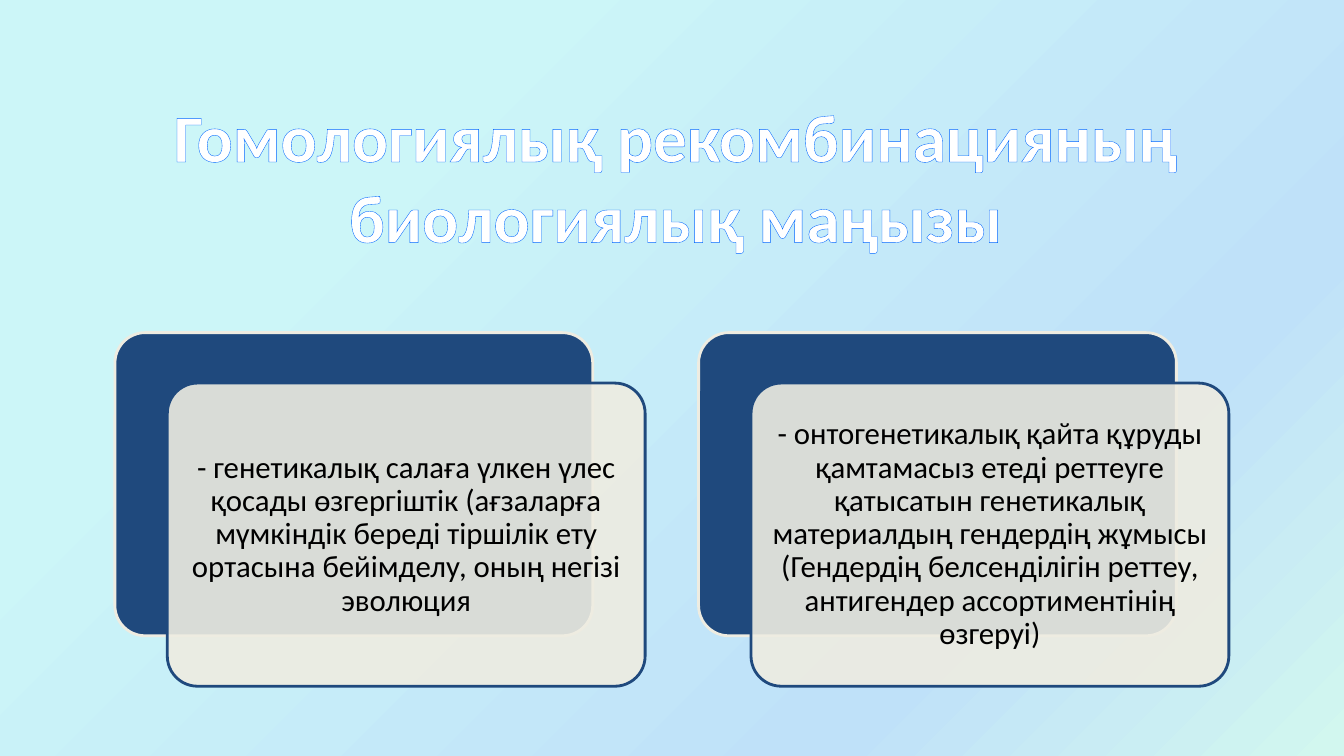
from dataclasses import dataclass

from lxml.etree import SubElement
from pptx import Presentation
from pptx.dml.color import RGBColor
from pptx.enum.shapes import MSO_SHAPE as Preset
from pptx.enum.text import MSO_ANCHOR as Anchor, MSO_AUTO_SIZE as AutoSize, PP_ALIGN as Align
from pptx.oxml.ns import qn
from pptx.shapes.autoshape import Shape
from pptx.slide import Slide
from pptx.text.text import TextFrame
from pptx.util import Emu, Inches, Pt

SLIDE_WIDTH, SLIDE_HEIGHT = Inches(13.33), Inches(7.5)


@dataclass(frozen=True)
class Theme:
    font: str = "Calibri"
    navy: str = "1F497D"
    cream: str = "EEECE1"
    black: str = "000000"
    white: str = "FFFFFF"
    title_outline: str = "0066FF"
    # Background stops: position in percent and colour
    backdrop: tuple[tuple[int, str], ...] = ((0, "CCF6F8"), (25, "CCF6F8"), (75, "BFE1F9"), (100, "D2F7EF"))
    title_size: float = 48
    body_size: float = 22
    border: float = 2


@dataclass(frozen=True)
class Area:
    """A rectangle in percent of the slide's width and height."""
    left: float
    top: float
    width: float
    height: float

    def shifted(self, right: float, down: float = 0) -> "Area":
        return Area(self.left + right, self.top + down, self.width, self.height)

    def lengths(self) -> tuple[Emu, Emu, Emu, Emu]:
        return (Emu(int(SLIDE_WIDTH * self.left / 100)), Emu(int(SLIDE_HEIGHT * self.top / 100)),
                Emu(int(SLIDE_WIDTH * self.width / 100)), Emu(int(SLIDE_HEIGHT * self.height / 100)))


THEME = Theme()
TITLE = "Гомологиялық рекомбинацияның биологиялық маңызы"
TITLE_AREA = Area(8.55, 11.87, 83.5, 22.67)
FIRST_CARD = Area(8.55, 44, 35.55, 40.1)
CARD_PITCH = 43.43
FRONT_SHIFT = (3.9, 6.67)
# Non-breaking spaces keep the word pairs together
MEANINGS = (
    "- генетикалық салаға үлкен үлес қосады өзгергіштік (ағзаларға мүмкіндік береді "
    "тіршілік ету ортасына бейімделу, оның негізі эволюция",
    "- онтогенетикалық қайта құруды қамтамасыз етеді реттеуге қатысатын генетикалық "
    "материалдың гендердің жұмысы (Гендердің белсенділігін реттеу, антигендер "
    "ассортиментінің өзгеруі)",
)


def paint_background(page: Slide) -> None:
    fill = page.background.fill
    fill.gradient()
    fill.gradient_angle = 315
    stops = page.background._cSld.find(".//" + qn("a:gsLst"))
    for stop in list(stops):
        stops.remove(stop)
    for position, color in THEME.backdrop:
        stop = SubElement(stops, qn("a:gs"), pos=str(position * 1000))
        SubElement(stop, qn("a:srgbClr"), val=color)


def write_text(frame: TextFrame, text: str, size: float, color: str, bold: bool = False) -> None:
    frame.text = text
    frame.word_wrap = True
    frame.auto_size = AutoSize.NONE
    frame.vertical_anchor = Anchor.MIDDLE
    para = frame.paragraphs[0]
    para.alignment = Align.CENTER
    font = para.runs[0].font
    font.name, font.size, font.bold = THEME.font, Pt(size), bold
    font.color.rgb = RGBColor.from_string(color)


def add_title(page: Slide) -> None:
    title = page.shapes.title
    title.left, title.top, title.width, title.height = TITLE_AREA.lengths()
    write_text(title.text_frame, TITLE, THEME.title_size, THEME.white, bold=True)
    # Letter outline, which must come first among the run properties
    properties = title.text_frame.paragraphs[0].runs[0].font._element
    outline = SubElement(properties, qn("a:ln"), w=str(Pt(1.45)))
    SubElement(SubElement(outline, qn("a:solidFill")), qn("a:srgbClr"), val=THEME.title_outline)
    properties.insert(0, outline)


def add_panel(page: Slide, area: Area, fill: str, line: str) -> Shape:
    panel = page.shapes.add_shape(Preset.ROUNDED_RECTANGLE, *area.lengths())
    panel.adjustments[0] = 0.1
    panel.shadow.inherit = False
    panel.fill.solid()
    panel.fill.fore_color.rgb = RGBColor.from_string(fill)
    panel.line.color.rgb = RGBColor.from_string(line)
    panel.line.width = Pt(THEME.border)
    return panel


def add_card(page: Slide, area: Area, text: str) -> None:
    add_panel(page, area, THEME.navy, THEME.cream)
    front = add_panel(page, area.shifted(*FRONT_SHIFT), THEME.cream, THEME.navy)
    # The front panel lets the back one show through
    color = front._element.spPr.find(qn("a:solidFill")).find(qn("a:srgbClr"))
    SubElement(color, qn("a:alpha"), val="90000")
    frame = front.text_frame
    write_text(frame, text, THEME.body_size, THEME.black)
    frame.margin_left = frame.margin_right = frame.margin_top = frame.margin_bottom = Inches(0.09)
    frame.paragraphs[0].line_spacing = 0.9


def main() -> None:
    deck = Presentation()
    deck.slide_width, deck.slide_height = SLIDE_WIDTH, SLIDE_HEIGHT
    page = deck.slides.add_slide(deck.slide_layouts.get_by_name("Title Only"))
    paint_background(page)
    add_title(page)
    for column, text in enumerate(MEANINGS):
        add_card(page, FIRST_CARD.shifted(column * CARD_PITCH), text)
    deck.save("out.pptx")


if __name__ == "__main__":
    main()
